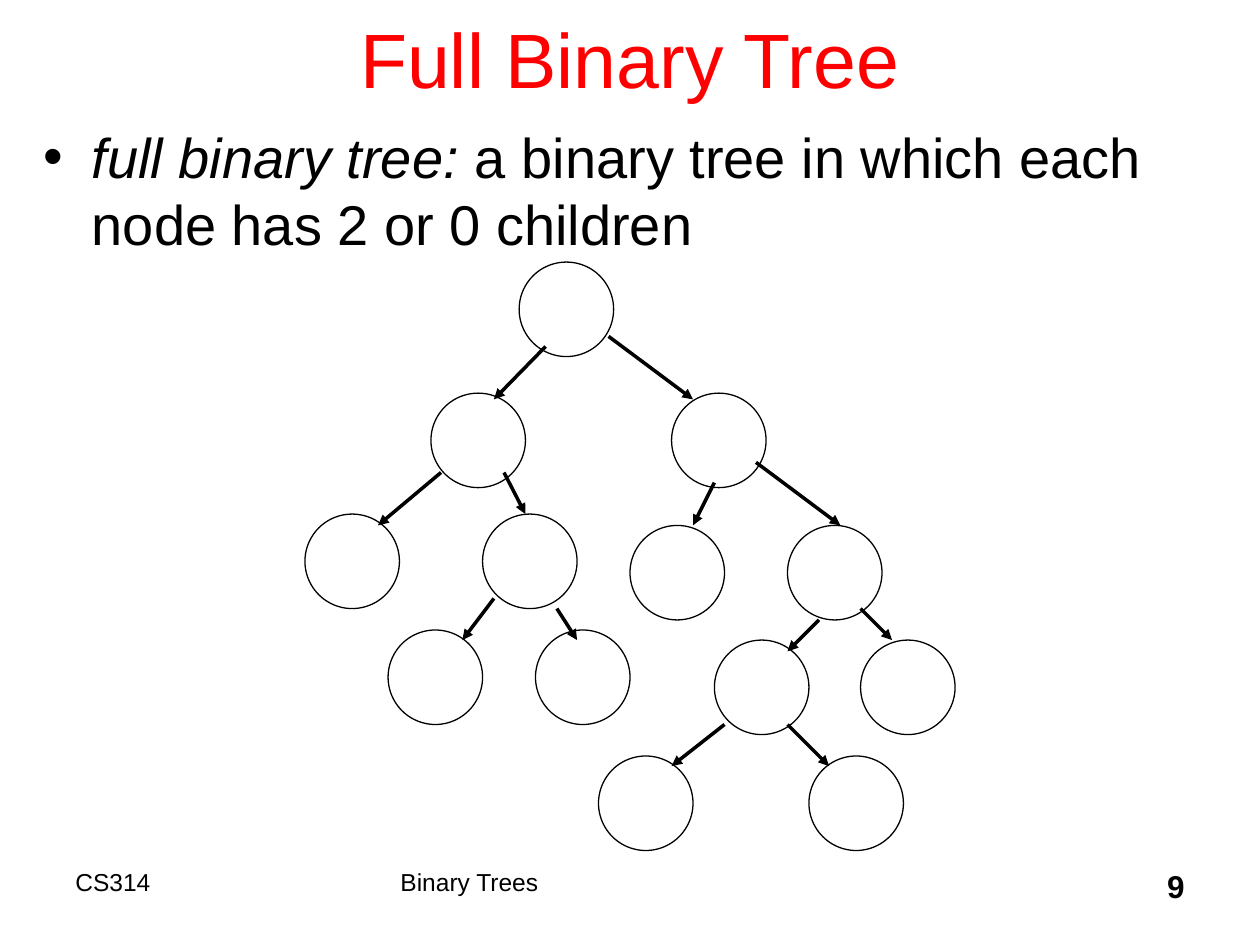
from typing import NamedTuple

from lxml.etree import SubElement
from pptx import Presentation
from pptx.dml.color import RGBColor
from pptx.enum.shapes import MSO_CONNECTOR as Conn, MSO_SHAPE as Geo
from pptx.enum.text import MSO_ANCHOR as Anchor, PP_ALIGN as Align
from pptx.oxml.ns import qn
from pptx.util import Inches, Pt

BLACK = RGBColor(0, 0, 0)
RED = RGBColor(255, 0, 0)
NODE_SIZE = 0.75


class Node(NamedTuple):
    left: float
    top: float


class Edge(NamedTuple):
    x1: float
    y1: float
    x2: float
    y2: float


class Label(NamedTuple):
    box: tuple
    runs: tuple
    size: int
    color: RGBColor = BLACK
    align: Align = Align.LEFT
    anchor: Anchor = Anchor.TOP
    bullet: bool = False


NODES = [
    Node(4.12, 2.08),
    Node(3.42, 3.12), Node(5.33, 3.12),
    Node(2.42, 4.08), Node(3.83, 4.08), Node(5, 4.17), Node(6.25, 4.17),
    Node(3.08, 5), Node(4.25, 5), Node(5.67, 5.08), Node(6.83, 5.08),
    Node(4.75, 6), Node(6.42, 6),
]
EDGES = [
    Edge(4.33, 2.75, 3.92, 3.17), Edge(4.83, 2.67, 5.5, 3.17),
    Edge(3.5, 3.75, 3, 4.17), Edge(4, 3.75, 4.17, 4.08),
    Edge(5.67, 3.83, 5.5, 4.17), Edge(6, 3.67, 6.67, 4.17),
    Edge(3.92, 4.75, 3.67, 5.08), Edge(4.42, 4.83, 4.58, 5.08),
    Edge(6.5, 4.92, 6.25, 5.17), Edge(6.83, 4.83, 7.08, 5.08),
    Edge(5.75, 5.75, 5.33, 6.08), Edge(6.25, 5.75, 6.58, 6.08),
]
LABELS = [
    Label((0.75, -0.17, 8.5, 1.25), (("Full Binary Tree", {}),), 44, RED,
          Align.CENTER, Anchor.MIDDLE),
    Label((0.25, 0.92, 9.5, 6),
          (("full binary tree:", {"italic": True}),
           (" a binary tree in which each node has 2 or 0 children", {})),
          32, bullet=True),
    Label((0.5, 6.83, 2.5, 0.5), (("CS314", {}),), 14),
    Label((3.08, 6.83, 3.83, 0.5), (("Binary Trees", {}),), 14),
    Label((7.42, 6.83, 2.08, 0.5), (("9", {"bold": True}),), 18,
          align=Align.RIGHT),
]


def add_label(shapes, label: Label) -> None:
    tf = shapes.add_textbox(*map(Inches, label.box)).text_frame
    tf.word_wrap = True
    tf.vertical_anchor = label.anchor
    p = tf.paragraphs[0]
    p.alignment = label.align
    if label.bullet:
        p.space_before = Pt(3)
        pPr = p._p.get_or_add_pPr()
        pPr.set("marL", str(Inches(0.38)))
        pPr.set("indent", str(Inches(-0.38)))
        SubElement(pPr, qn("a:buFont"), typeface="Arial")
        SubElement(pPr, qn("a:buChar"), char="•")
    for text, extra in label.runs:
        r = p.add_run()
        r.text = text
        r.font.color.rgb = label.color
        fmt = {"name": "Arial", "size": Pt(label.size), **extra}
        for key, value in fmt.items():
            setattr(r.font, key, value)


def add_node(shapes, node: Node) -> None:
    size = Inches(NODE_SIZE)
    sp = shapes.add_shape(Geo.OVAL, Inches(node.left), Inches(node.top), size, size)
    sp.shadow.inherit = False
    sp.fill.background()
    sp.line.color.rgb = BLACK
    sp.line.width = Pt(0.75)


def add_edge(shapes, edge: Edge) -> None:
    cx = shapes.add_connector(Conn.STRAIGHT, *map(Inches, edge))
    cx.line.color.rgb = BLACK
    cx.line.width = Pt(2)
    SubElement(cx.line._get_or_add_ln(), qn("a:tailEnd"), type="triangle")
    SubElement(cx._element.spPr, qn("a:effectLst"))


def main() -> None:
    prs = Presentation()
    prs.slide_width, prs.slide_height = Inches(10), Inches(7.5)
    shapes = prs.slides.add_slide(prs.slide_layouts[6]).shapes
    for draw, items in ((add_label, LABELS), (add_node, NODES), (add_edge, EDGES)):
        for item in items:
            draw(shapes, item)
    prs.save("out.pptx")


if __name__ == "__main__":
    main()
